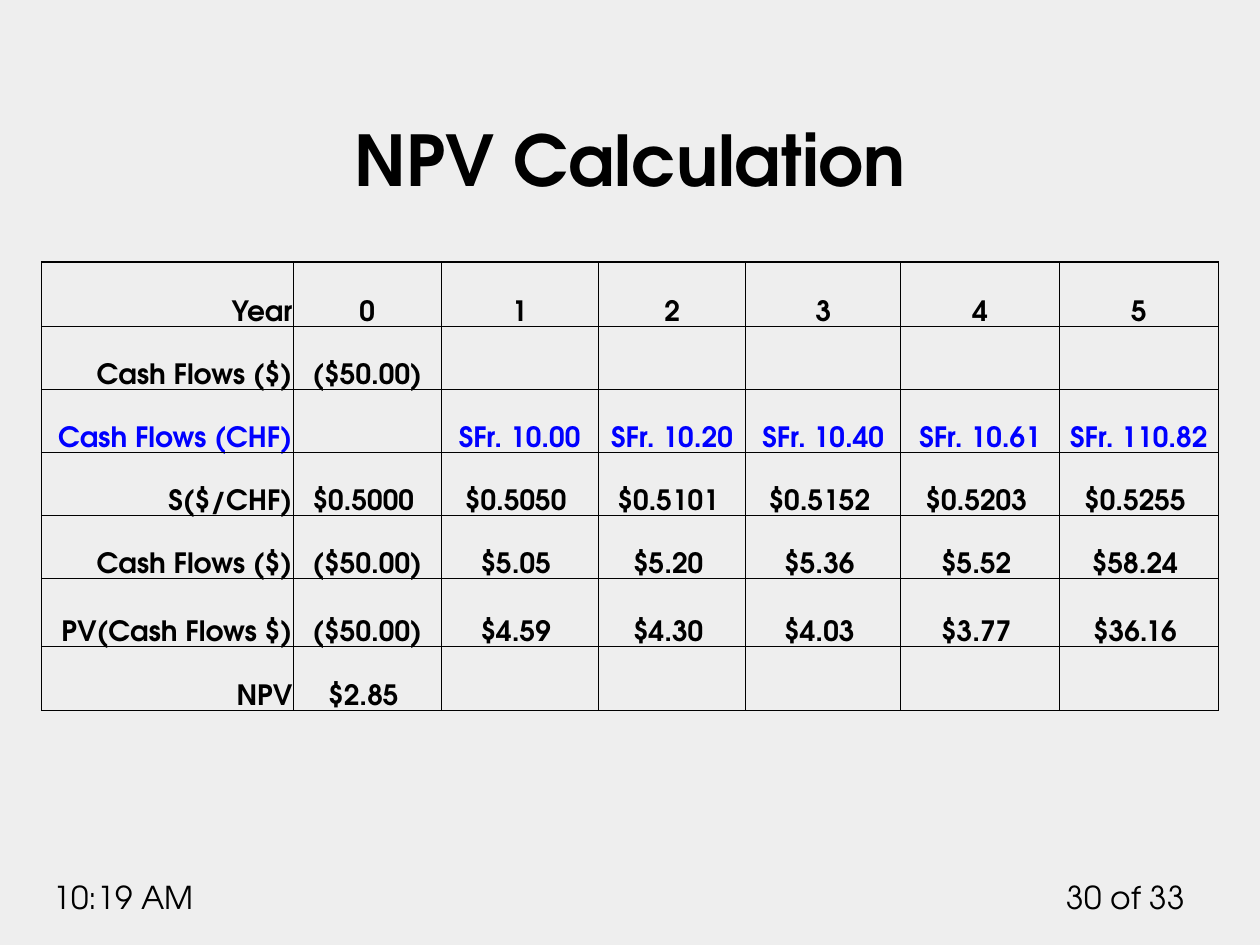
import pptx
import pptx.dml.color
import pptx.enum.text
import pptx.oxml
import pptx.oxml.ns
import pptx.util

Inches = pptx.util.Inches
Pt = pptx.util.Pt
ALIGN = pptx.enum.text.PP_ALIGN
ANCHOR = pptx.enum.text.MSO_ANCHOR
FONT = "TeX Gyre Adventor"
COLORS = {"page": "EEEEEE", "text": "000000", "francs": "0000FF"}


def write(frame, text, size, align, color="text", bold=False):
    paragraph = frame.paragraphs[0]
    paragraph.text = text
    paragraph.alignment = align
    paragraph.font.name = FONT
    paragraph.font.size = Pt(size)
    paragraph.font.bold = bold
    paragraph.font.color.rgb = pptx.dml.color.RGBColor.from_string(COLORS[color])


def set_borders(cell, widths):
    properties = cell._tc.get_or_add_tcPr()
    for position, (side, width) in enumerate(widths.items()):
        line = pptx.oxml.parse_xml(
            f'<a:ln{side} {pptx.oxml.ns.nsdecls("a")} w="{Pt(width)}"><a:solidFill>'
            f'<a:srgbClr val="{COLORS["text"]}"/></a:solidFill></a:ln{side}>')
        properties.insert(position, line)


deck = pptx.Presentation()
deck.slide_width, deck.slide_height = Inches(10), Inches(7.5)
page = deck.slides.add_slide(deck.slide_layouts[6])
page.background.fill.solid()
page.background.fill.fore_color.rgb = pptx.dml.color.RGBColor.from_string(COLORS["page"])

# Title and footer
texts = [
    ("30 of 33", (8.33, 6.92, 1.17, 0.4), 18, ALIGN.RIGHT, ANCHOR.TOP, False),
    ("10:19 AM", (0.33, 6.92, 1.58, 0.4), 18, ALIGN.LEFT, ANCHOR.TOP, False),
    ("NPV Calculation", (0.5, 0.39, 9, 1.25), 40, ALIGN.CENTER, ANCHOR.BOTTOM, True),
]
for text, place, size, align, anchor, bold in texts:
    box = page.shapes.add_textbox(*map(Inches, place))
    box.text_frame.word_wrap = True
    box.text_frame.vertical_anchor = anchor
    write(box.text_frame, text, size, align, bold=bold)

# Cash flow table; the trailing space keeps positive amounts clear of the bracket column
rows = [
    ["Year", "0", "1", "2", "3", "4", "5"],
    ["Cash Flows ($)", "($50.00)", "", "", "", "", ""],
    ["Cash Flows (CHF)", "", "SFr. 10.00", "SFr. 10.20", "SFr. 10.40", "SFr. 10.61", "SFr. 110.82"],
    ["S($/CHF)", "$0.5000 ", "$0.5050 ", "$0.5101 ", "$0.5152 ", "$0.5203 ", "$0.5255 "],
    ["Cash Flows ($)", "($50.00)", "$5.05 ", "$5.20 ", "$5.36 ", "$5.52 ", "$58.24 "],
    ["PV(Cash Flows $)", "($50.00)", "$4.59 ", "$4.30 ", "$4.03 ", "$3.77 ", "$36.16 "],
    ["NPV", "$2.85 ", "", "", "", "", ""],
]
column_widths = [2, 1.17, 1.25, 1.17, 1.23, 1.26, 1.26]
row_heights = [0.51, 0.5, 0.5, 0.5, 0.5, 0.54, 0.51]
table = page.shapes.add_table(len(rows), len(column_widths), Inches(0.33), Inches(2.08),
                              Inches(9.33), Inches(3.55)).table
table.first_row = table.horz_banding = False
for column, width in zip(table.columns, column_widths):
    column.width = Inches(width)
for row, height in zip(table.rows, row_heights):
    row.height = Inches(height)

for r, values in enumerate(rows):
    for c, value in enumerate(values):
        cell = table.cell(r, c)
        cell.fill.background()
        cell.vertical_anchor = ANCHOR.BOTTOM
        cell.margin_left = cell.margin_right = cell.margin_top = Inches(0.01)
        cell.margin_bottom = 0
        write(cell.text_frame, value, 16, ALIGN.CENTER if c else ALIGN.RIGHT,
              "francs" if r == 2 else "text", bold=True)

        # Heavy lines run round the table and inside the header row and column
        heavy_columns = {0, len(values)} | ({1} if r else set())
        heavy_rows = {0, len(rows)} | ({1} if c else set())
        set_borders(cell, {
            "L": 1 if c in heavy_columns else 0.5,
            "R": 1 if c + 1 in heavy_columns else 0.5,
            "T": 1 if r in heavy_rows else 0.5,
            "B": 1 if r + 1 in heavy_rows else 0.5,
        })

deck.save("out.pptx")
